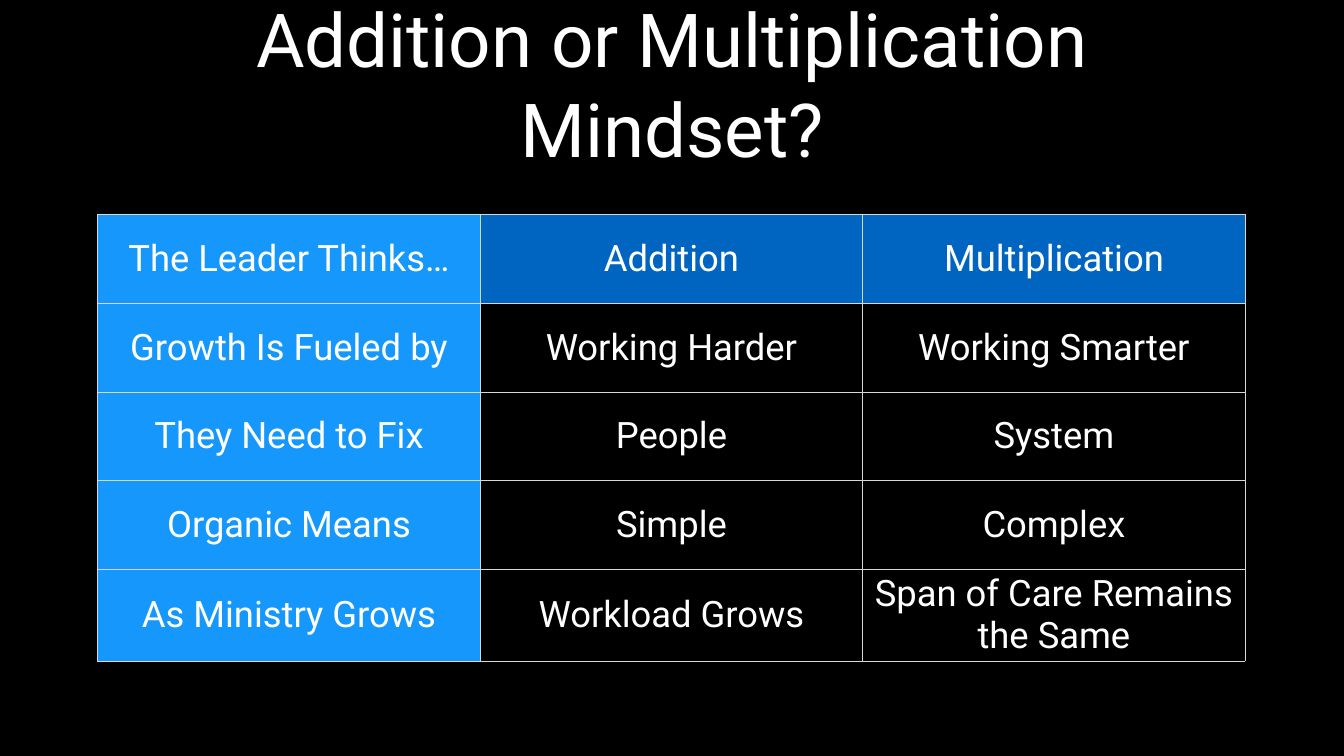
from lxml.etree import SubElement
from pptx import Presentation
from pptx.dml.color import RGBColor
from pptx.enum.text import MSO_ANCHOR, MSO_AUTO_SIZE, PP_ALIGN
from pptx.oxml.ns import qn
from pptx.util import Inches, Pt

TITLE = "Addition or Multiplication Mindset?"
ROWS = [
    ("The Leader Thinks…", "Addition", "Multiplication"),
    ("Growth Is Fueled by", "Working Harder", "Working Smarter"),
    ("They Need to Fix", "People", "System"),
    ("Organic Means", "Simple", "Complex"),
    ("As Ministry Grows", "Workload Grows", "Span of Care Remains the Same"),
]
THEME = {
    "font": "Roboto", "title_size": 106.4, "cell_size": 52,
    "background": "000000", "text": "FFFFFF", "border": "D6D7D6",
    "header": "0065C1", "label": "1597FC",
}
LEFT, TOP, COLUMN_WIDTH, ROW_HEIGHT = 1.94, 4.26, 7.59, 1.76
INSET = Inches(0.06)


def write_text(holder, text, *, size):
    """Put centred text in a shape or a table cell."""
    holder.margin_left = holder.margin_right = INSET
    holder.margin_top = holder.margin_bottom = INSET
    holder.vertical_anchor = MSO_ANCHOR.MIDDLE
    frame = getattr(holder, "text_frame", holder)
    frame.word_wrap = True
    para = frame.paragraphs[0]
    para.alignment = PP_ALIGN.CENTER
    span = para.add_run()
    span.text = text
    span.font.name = THEME["font"]
    span.font.size = Pt(size)
    span.font.color.rgb = RGBColor.from_string(THEME["text"])


def add_borders(cell):
    properties = cell._tc.get_or_add_tcPr()
    for side in ("a:lnL", "a:lnR", "a:lnT", "a:lnB"):
        line = SubElement(properties, qn(side), w=str(Pt(1)))
        fill = SubElement(line, qn("a:solidFill"))
        SubElement(fill, qn("a:srgbClr"), val=THEME["border"])


def fill_cell(cell, row, column):
    if column == 0 or row == 0:
        cell.fill.solid()
        color = THEME["label"] if column == 0 else THEME["header"]
        cell.fill.fore_color.rgb = RGBColor.from_string(color)
    else:
        cell.fill.background()


def main():
    deck = Presentation()
    deck.slide_width, deck.slide_height = Inches(26.67), Inches(15)
    page = deck.slides.add_slide(deck.slide_layouts[5])
    page.background.fill.solid()
    page.background.fill.fore_color.rgb = RGBColor.from_string(THEME["background"])

    # Title
    title = page.shapes.title
    title.left, title.top = Inches(1.85), Inches(0.39)
    title.width, title.height = Inches(22.97), Inches(2.5)
    write_text(title.text_frame, TITLE, size=THEME["title_size"])
    title.text_frame.auto_size = MSO_AUTO_SIZE.NONE

    # Comparison table
    columns = len(ROWS[0])
    table = page.shapes.add_table(
        len(ROWS), columns, Inches(LEFT), Inches(TOP),
        Inches(COLUMN_WIDTH * columns), Inches(ROW_HEIGHT * len(ROWS))).table
    for row, texts in enumerate(ROWS):
        for column, text in enumerate(texts):
            cell = table.cell(row, column)
            write_text(cell, text, size=THEME["cell_size"])
            add_borders(cell)
            fill_cell(cell, row, column)

    deck.save("out.pptx")


if __name__ == "__main__":
    main()
